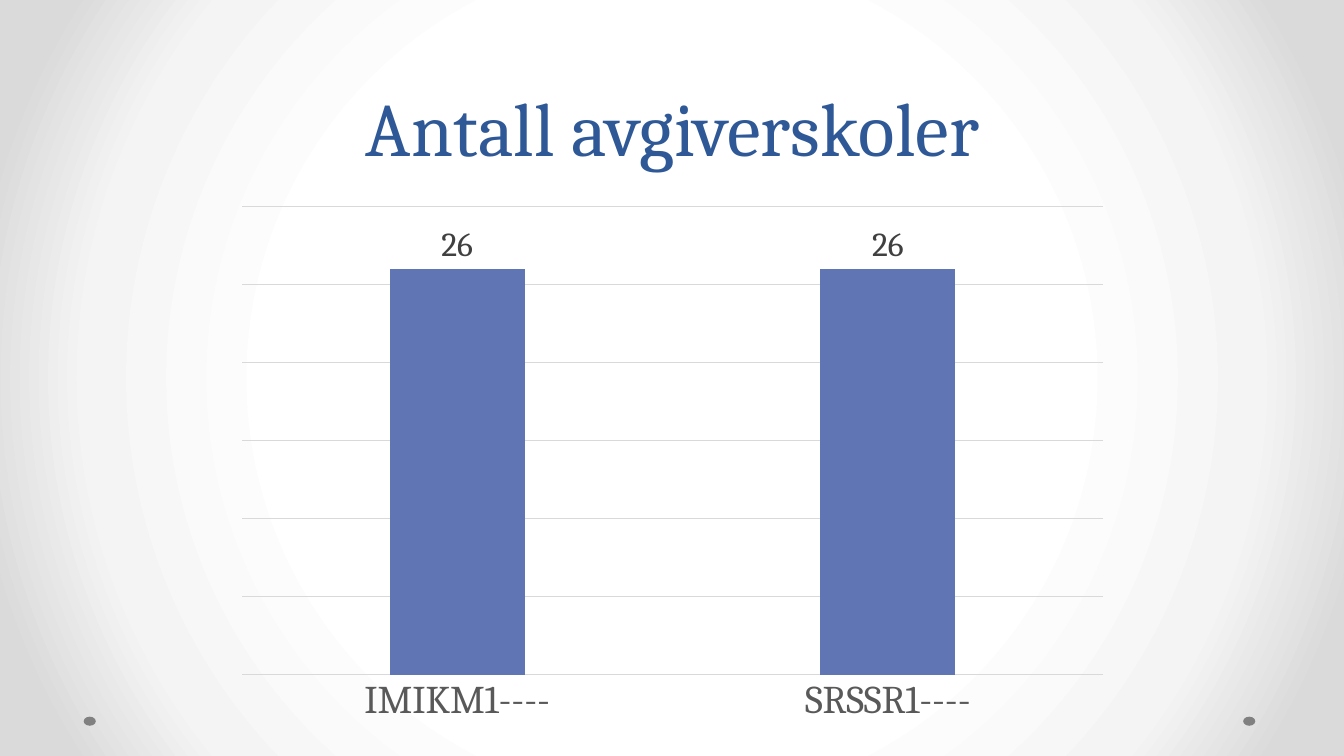
"""Build a slide with a column chart of the number of sending schools."""
import pptx
import pptx.chart.data
import pptx.dml.color
import pptx.enum.chart
import pptx.enum.shapes
import pptx.enum.text
import pptx.oxml
import pptx.oxml.ns
import pptx.util

Inches = pptx.util.Inches
Pt = pptx.util.Pt
RGB = pptx.dml.color.RGBColor.from_string

THEME = {
    "face": "Cambria",
    "title": (54, "2F5897"),
    "base": (10, "000000"),
    "axis": (28, "595959"),
    "label": (24, "404040"),
    "bar": "6076B4",
    "grid": "D9D9D9",
    "dot": "808080",
    "glow": [(50, "FFFFFF"), (76, "F4F4F4"), (92, "DADADA")],
}


def style(font, role):
    size, color = THEME[role]
    font.name = THEME["face"]
    font.size = Pt(size)
    font.color.rgb = RGB(color)


def rule(line):
    line.color.rgb = RGB(THEME["grid"])
    line.width = Pt(0.75)


deck = pptx.Presentation()
deck.slide_width = Inches(13.33)
deck.slide_height = Inches(7.5)
slide = deck.slides.add_slide(deck.slide_layouts[5])

slide.background.fill.gradient()
stops = "".join(
    f'<a:gs pos="{pos * 1000}"><a:srgbClr val="{color}"/></a:gs>'
    for pos, color in THEME["glow"]
)
glow = pptx.oxml.parse_xml(
    f'<a:gradFill {pptx.oxml.ns.nsdecls("a")} rotWithShape="1">'
    f"<a:gsLst>{stops}</a:gsLst>"
    '<a:path path="circle">'
    '<a:fillToRect l="50000" t="50000" r="50000" b="50000"/>'
    "</a:path></a:gradFill>"
)
plain = slide.element.find(".//" + pptx.oxml.ns.qn("a:gradFill"))
plain.getparent().replace(plain, glow)

for left in (12.33, 0.83):
    dot = slide.shapes.add_shape(
        pptx.enum.shapes.MSO_SHAPE.OVAL,
        Inches(left), Inches(7.11), Inches(0.12), Inches(0.09),
    )
    dot.shadow.inherit = False
    dot.fill.solid()
    dot.fill.fore_color.rgb = RGB(THEME["dot"])
    dot.line.fill.background()

title = slide.shapes.title
title.left, title.top = Inches(0.67), Inches(0)
title.width, title.height = Inches(12), Inches(1.75)
frame = title.text_frame
frame.text = "Antall avgiverskoler"
frame.vertical_anchor = pptx.enum.text.MSO_ANCHOR.BOTTOM
frame.auto_size = pptx.enum.text.MSO_AUTO_SIZE.NONE
head = frame.paragraphs[0]
head.alignment = pptx.enum.text.PP_ALIGN.CENTER
head.line_spacing = Pt(58)
style(head.font, "title")

data = pptx.chart.data.CategoryChartData()
data.categories = ["IMIKM1----", "SRSSR1----"]
data.add_series("Series 1", (26, 26))
chart = slide.shapes.add_chart(
    pptx.enum.chart.XL_CHART_TYPE.COLUMN_CLUSTERED,
    Inches(2.22), Inches(1.94), Inches(8.9), Inches(5.34), data,
).chart
chart.has_title = False
chart.has_legend = False
style(chart.font, "base")

axis = chart.category_axis
axis.major_tick_mark = pptx.enum.chart.XL_TICK_MARK.NONE
style(axis.tick_labels.font, "axis")
rule(axis.format.line)

scale = chart.value_axis
scale.visible = False
scale.minimum_scale = 0
scale.maximum_scale = 30
scale.major_unit = 5
scale.has_major_gridlines = True
rule(scale.major_gridlines.format.line)

plot = chart.plots[0]
plot.gap_width = 219
plot.overlap = -27
plot.vary_by_categories = False
bars = plot.series[0]
bars.format.fill.solid()
bars.format.fill.fore_color.rgb = RGB(THEME["bar"])
labels = bars.data_labels
labels.show_value = True
labels.position = pptx.enum.chart.XL_LABEL_POSITION.OUTSIDE_END
style(labels.font, "label")

deck.save("out.pptx")
